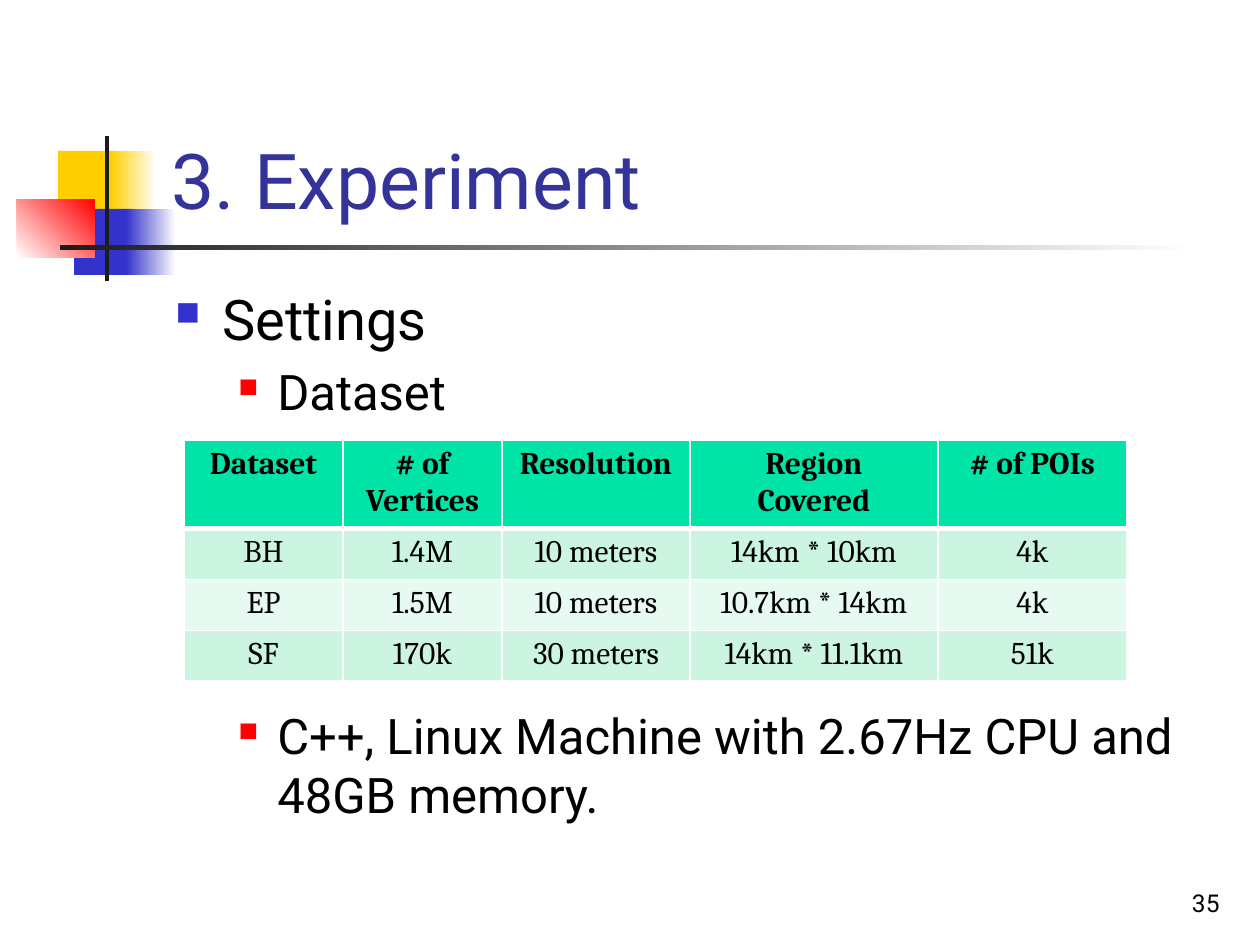
from dataclasses import dataclass

from lxml import etree
from pptx import Presentation
from pptx.dml.color import RGBColor
from pptx.enum.shapes import MSO_SHAPE
from pptx.enum.text import MSO_ANCHOR, PP_ALIGN
from pptx.oxml.ns import qn
from pptx.util import Emu, Pt

RECTANGLE = MSO_SHAPE.RECTANGLE
BOTTOM = MSO_ANCHOR.BOTTOM
LEFT, CENTER, RIGHT = PP_ALIGN.LEFT, PP_ALIGN.CENTER, PP_ALIGN.RIGHT
PX_PER_INCH = 126
SANS, SERIF = "Roboto", "Cambria"
WHITE, BLACK, CHARCOAL = "FFFFFF", "000000", "1C1C1C"
YELLOW, BLUE, RED, NAVY = "FFCF01", "3333CC", "FF0000", "333399"
HEADER_FILL, BAND_FILLS = "00E4A8", ("CCF5E1", "E7FAF1")


@dataclass(frozen=True)
class Block:
    """A rectangle that fades from start to end, or is plain without an end."""
    left: int
    top: int
    width: int
    height: int
    start: str
    end: str = ""
    angle: int = 0


@dataclass(frozen=True)
class Bullet:
    text: str
    level: int
    size: int
    color: str
    scale: int  # bullet size in percent of the text
    margin: int
    hanging: int
    before: float  # points


BLOCKS = (
    Block(58, 151, 60, 66, YELLOW),
    Block(111, 151, 45, 66, YELLOW, WHITE),
    Block(74, 209, 58, 66, BLUE),
    Block(126, 209, 50, 66, BLUE, WHITE),
    Block(17, 199, 78, 59, WHITE, RED, 45),
    Block(105, 136, 4, 145, CHARCOAL),
    Block(60, 245, 1134, 5, CHARCOAL, WHITE),
)
# The last bullet leaves room for the table above it.
BULLETS = (
    Bullet("Settings", 0, 32, BLUE, 60, 47, 47, 0),
    Bullet("Dataset", 1, 28, RED, 55, 102, 39, 5.6),
    Bullet("C++, Linux Machine with 2.67Hz CPU and 48GB memory.",
           1, 28, RED, 55, 102, 39, 163),
)
COLUMN_WIDTHS = (159, 159, 188, 248, 189)
ROW_HEIGHTS = (84, 51, 51, 51)
ROWS = (
    ("Dataset", "# of Vertices", "Resolution", "Region\nCovered", "# of POIs"),
    ("BH", "1.4M", "10 meters", "14km * 10km", "4k"),
    ("EP", "1.5M", "10 meters", "10.7km * 14km", "4k"),
    ("SF", "170k", "30 meters", "14km * 11.1km", "51k"),
)


def px(length: int) -> Emu:
    return Emu(round(length * 914400 / PX_PER_INCH))


def rgb(color: str) -> RGBColor:
    return RGBColor.from_string(color)


def style(para, size: int, color: str, name: str = SANS,
          align=LEFT, bold: bool = False) -> None:
    para.alignment = align
    font = para.font
    font.size, font.name, font.bold = Pt(size), name, bold
    font.color.rgb = rgb(color)


def add_block(page, block: Block) -> None:
    shape = page.shapes.add_shape(
        RECTANGLE, px(block.left), px(block.top), px(block.width), px(block.height))
    shape.shadow.inherit = False
    shape.line.fill.background()
    if not block.end:
        shape.fill.solid()
        shape.fill.fore_color.rgb = rgb(block.start)
        return
    shape.fill.gradient()
    shape.fill.gradient_angle = block.angle
    for stop, color, position in zip(
            shape.fill.gradient_stops, (block.start, block.end), (0, 1)):
        stop.color.rgb = rgb(color)
        stop.position = position


def add_title(page, text: str) -> None:
    title = page.shapes.title
    title.left, title.top, title.width, title.height = map(px, (159, 29, 1073, 202))
    title.text_frame.text = text
    title.text_frame.vertical_anchor = BOTTOM
    style(title.text_frame.paragraphs[0], 44, NAVY)


def add_text_box(page, left: int, top: int, width: int, height: int):
    frame = page.shapes.add_textbox(px(left), px(top), px(width), px(height)).text_frame
    frame.word_wrap = True
    return frame


def fill_bullet(para, bullet: Bullet) -> None:
    para.text = bullet.text
    para.level = bullet.level
    para.space_before = Pt(bullet.before)
    properties = para._p.get_or_add_pPr()
    properties.set("marL", str(px(bullet.margin)))
    properties.set("indent", str(-px(bullet.hanging)))
    color = etree.SubElement(properties, qn("a:buClr"))
    etree.SubElement(color, qn("a:srgbClr"), val=bullet.color)
    etree.SubElement(properties, qn("a:buSzPct"), val=str(bullet.scale * 1000))
    etree.SubElement(properties, qn("a:buChar"), char="■")
    style(para, bullet.size, BLACK)


def set_borders(cell, top: int, bottom: int) -> None:
    """Draw white borders; top and bottom are widths in points."""
    properties = cell._tc.get_or_add_tcPr()
    for side, width in (("L", 1), ("R", 1), ("T", top), ("B", bottom)):
        line = etree.SubElement(properties, qn(f"a:ln{side}"), w=str(Pt(width)))
        fill = etree.SubElement(line, qn("a:solidFill"))
        etree.SubElement(fill, qn("a:srgbClr"), val=WHITE)


def add_dataset_table(page) -> None:
    table = page.shapes.add_table(
        len(ROWS), len(COLUMN_WIDTHS), px(184), px(440),
        px(sum(COLUMN_WIDTHS)), px(sum(ROW_HEIGHTS))).table
    for column, width in zip(table.columns, COLUMN_WIDTHS):
        column.width = px(width)
    for row, height in zip(table.rows, ROW_HEIGHTS):
        row.height = px(height)
    for r, texts in enumerate(ROWS):
        header = r == 0
        fill = HEADER_FILL if header else BAND_FILLS[(r - 1) % 2]
        for c, text in enumerate(texts):
            cell = table.cell(r, c)
            cell.text = text
            set_borders(cell, top=3 if r == 1 else 1, bottom=3 if header else 1)
            cell.fill.solid()
            cell.fill.fore_color.rgb = rgb(fill)
            for para in cell.text_frame.paragraphs:
                style(para, 18, BLACK, SERIF, CENTER, header)


def main() -> None:
    deck = Presentation()
    deck.slide_width, deck.slide_height = px(1260), px(945)
    page = deck.slides.add_slide(deck.slide_layouts[5])
    for block in BLOCKS:
        add_block(page, block)
    add_title(page, "3. Experiment")

    body = add_text_box(page, 163, 278, 1071, 135)
    for i, bullet in enumerate(BULLETS):
        fill_bullet(body.add_paragraph() if i else body.paragraphs[0], bullet)

    number = add_text_box(page, 970, 861, 262, 63)
    number.text = "35"
    number.vertical_anchor = BOTTOM
    style(number.paragraphs[0], 14, BLACK, align=RIGHT)

    add_dataset_table(page)
    deck.save("out.pptx")


if __name__ == "__main__":
    main()
